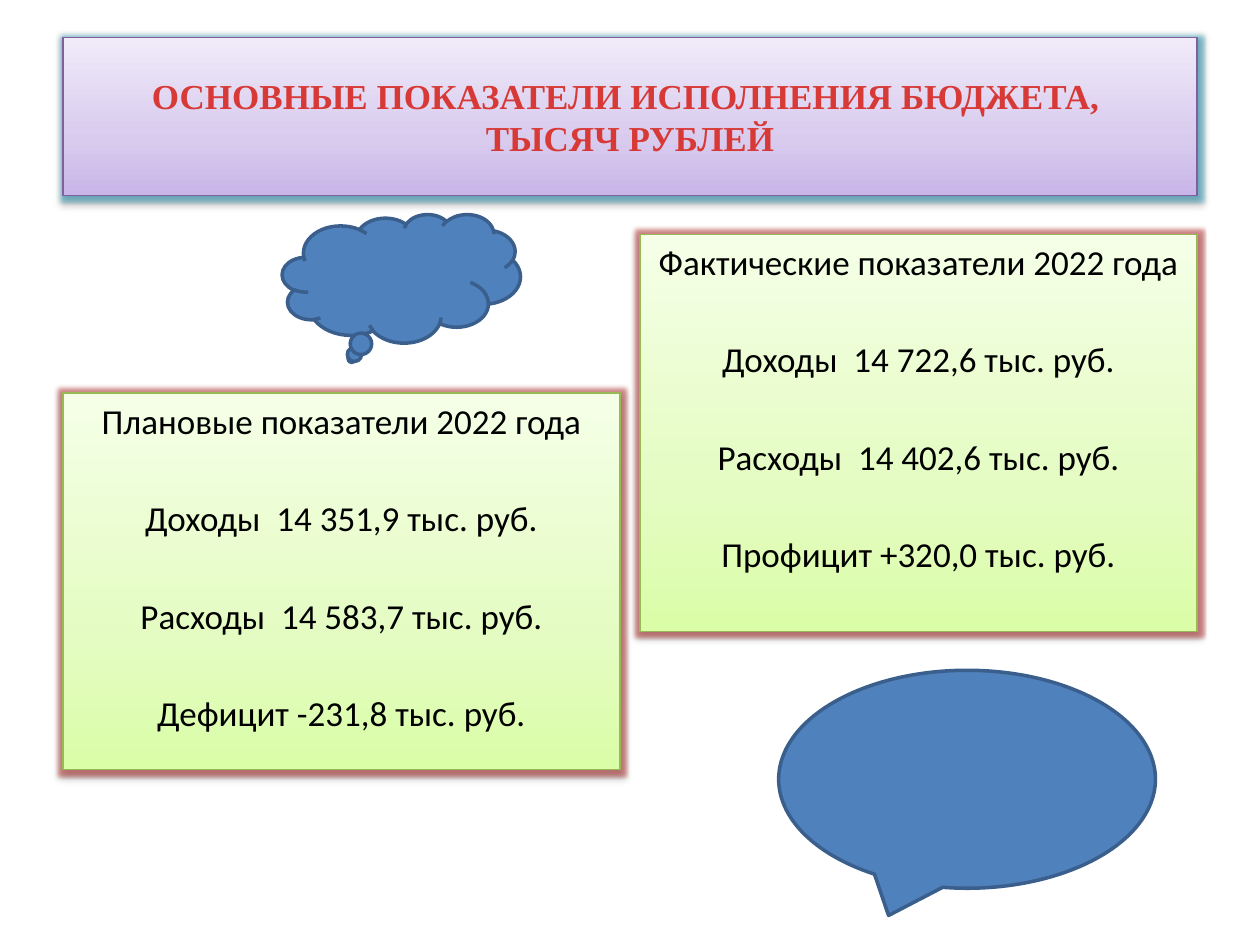
from lxml.etree import SubElement
from pptx import Presentation
from pptx.dml.color import RGBColor
from pptx.enum.shapes import MSO_SHAPE
from pptx.enum.text import MSO_ANCHOR, MSO_AUTO_SIZE, PP_ALIGN
from pptx.oxml.ns import qn
from pptx.util import Inches, Pt

CLOUD = MSO_SHAPE.CLOUD_CALLOUT
BUBBLE = MSO_SHAPE.OVAL_CALLOUT
CENTER = PP_ALIGN.CENTER
MIDDLE, TOP = MSO_ANCHOR.MIDDLE, MSO_ANCHOR.TOP
FIXED = MSO_AUTO_SIZE.NONE

WIDE, HIGH = 10, 7.5
EDGE = 0.5
FULL = WIDE - 2 * EDGE
GAP = 0.16
COL = (FULL - GAP) / 2
SIZE = 20
STOPS = (0, 35, 100)

HUES = {
    "title": "D73A36", "text": "000000", "shade": "000000",
    "violet edge": "7D60A0", "green edge": "98B955",
    "teal glow": "4BACC6", "red glow": "C0504D",
    "blue": "4F81BD", "blue edge": "3A5F8C",
}
FADES = {
    "violet": ("C9B5E8", "D8CBEE", "F0EAF9"),
    "green": ("DAFDA7", "E4FCC2", "F5FFE7"),
}
FACT = ("Фактические показатели 2022 года", "Доходы  14 722,6 тыс. руб.",
        "Расходы  14 402,6 тыс. руб.", "Профицит +320,0 тыс. руб.")
PLAN = ("Плановые показатели 2022 года", "Доходы  14 351,9 тыс. руб.",
        "Расходы  14 583,7 тыс. руб.", "Дефицит -231,8 тыс. руб.")


def rgb(name):
    return RGBColor.from_string(HUES[name])


def add_hue(node, hue, alpha=None):
    clr = SubElement(node, qn("a:srgbClr"), val=hue)
    if alpha:
        SubElement(clr, qn("a:alpha"), val=str(alpha * 1000))


def set_line(shape, name, width):
    shape.line.color.rgb = rgb(name)
    shape.line.width = Pt(width)


def set_fade(shape, hues):
    """Fill from the bottom up with three colour stops."""
    shape.fill.gradient()
    shape.fill.gradient_angle = 90
    stops = shape.fill._xPr.find(".//" + qn("a:gsLst"))
    stops.clear()
    for pos, hue in zip(STOPS, hues):
        add_hue(SubElement(stops, qn("a:gs"), pos=str(pos * 1000)), hue)


def set_glow(shape, name):
    """Add a soft glow and a short shadow straight down."""
    fx = SubElement(shape.element.spPr, qn("a:effectLst"))
    glow = SubElement(fx, qn("a:glow"), rad=str(Pt(5)))
    add_hue(glow, HUES[name], 60)
    shade = SubElement(fx, qn("a:outerShdw"), blurRad=str(Pt(3.1)),
                       dist=str(Pt(1.6)), dir="5400000", rotWithShape="0")
    add_hue(shade, HUES["shade"], 38)


def place(shape, *box):
    shape.left, shape.top, shape.width, shape.height = map(Inches, box)


def set_panel(shape, box, fade, glow, anchor):
    place(shape, *box)
    set_fade(shape, FADES[fade])
    set_line(shape, fade + " edge", 0.75)
    set_glow(shape, glow)
    frame = shape.text_frame
    frame.auto_size = FIXED
    frame.word_wrap = True
    frame.vertical_anchor = anchor
    return frame


def add_run(para, text, font, hue, bold=False):
    para.alignment = CENTER
    run = para.add_run()
    run.text = text
    run.font.name = font
    run.font.size = Pt(SIZE)
    run.font.bold = bold
    run.font.color.rgb = rgb(hue)


def set_title(shape):
    box = EDGE, 0.3, FULL, 1.25
    para = set_panel(shape, box, "violet", "teal glow", MIDDLE).paragraphs[0]
    style = "Times New Roman", "title", True
    add_run(para, "ОСНОВНЫЕ ПОКАЗАТЕЛИ ИСПОЛНЕНИЯ БЮДЖЕТА, ", *style)
    para.add_line_break()
    add_run(para, "ТЫСЯЧ РУБЛЕЙ", *style)


def set_list(shape, col, top, high, rows):
    box = EDGE + col * (COL + GAP), top, COL, high
    frame = set_panel(shape, box, "green", "red glow", TOP)
    for i, row in enumerate(rows):
        para = frame.add_paragraph() if i else frame.paragraphs[0]
        add_run(para, row, "Calibri", "text")
        para.space_before = Pt(31.6 if i else 0)
        props = para._p.get_or_add_pPr()
        props.set("marL", "0")
        props.set("indent", "0")
        SubElement(props, qn("a:buNone"))


def add_callout(slide, kind, *box):
    shape = slide.shapes.add_shape(kind, *map(Inches, box))
    shape.shadow.inherit = False
    shape.fill.solid()
    shape.fill.fore_color.rgb = rgb("blue")
    set_line(shape, "blue edge", 2)


def main():
    deck = Presentation()
    deck.slide_width, deck.slide_height = Inches(WIDE), Inches(HIGH)
    slide = deck.slides.add_slide(deck.slide_layouts[3])
    title, plan, fact = slide.placeholders
    set_title(title)
    set_list(fact, 1, 1.86, 3.15, FACT)
    set_list(plan, 0, 3.12, 2.99, PLAN)
    add_callout(slide, CLOUD, 2.24, 1.7, 1.89, 1.02)
    add_callout(slide, BUBBLE, 6.18, 5.32, 2.99, 1.73)
    deck.save("out.pptx")


if __name__ == "__main__":
    main()
